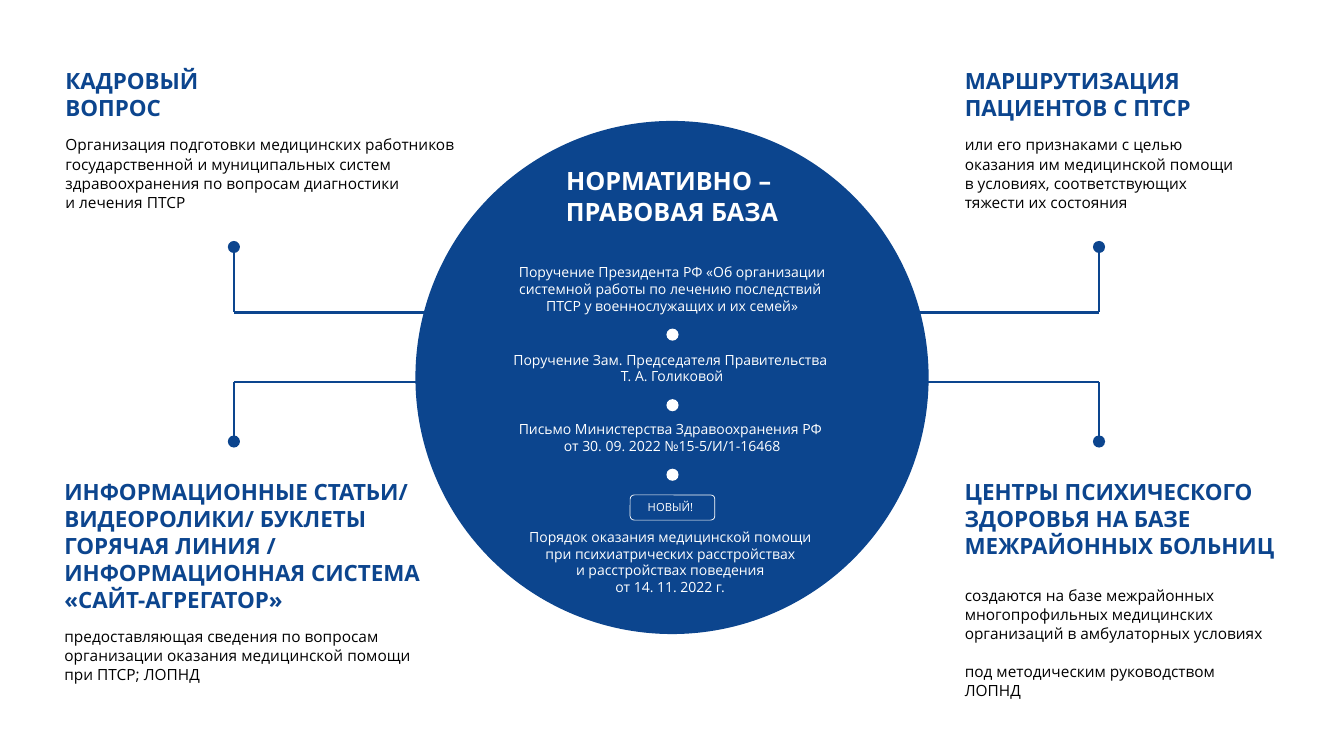
"""Builds the slide on the legal basis and the four lines of PTSD care."""
from lxml import etree
from pptx import Presentation
from pptx.dml.color import RGBColor
from pptx.enum.shapes import MSO_CONNECTOR, MSO_SHAPE
from pptx.enum.text import MSO_ANCHOR, MSO_AUTO_SIZE, PP_ALIGN
from pptx.oxml.ns import qn
from pptx.util import Emu, Pt

LEFT, CENTER = PP_ALIGN.LEFT, PP_ALIGN.CENTER
TOP, MIDDLE = MSO_ANCHOR.TOP, MSO_ANCHOR.MIDDLE
OVAL, ROUNDED = MSO_SHAPE.OVAL, MSO_SHAPE.ROUNDED_RECTANGLE
STRAIGHT = MSO_CONNECTOR.STRAIGHT

PX = 9144
FONT = "Open Sans"
COLORS = {"blue": "0C458E", "white": "FFFFFF", "black": "000000"}

TITLE = ((476, 162, 381, 68), ["НОРМАТИВНО – \nПРАВОВАЯ БАЗА"])
DOCUMENTS = [
    ((497, 261, 339, 56), ["Поручение Президента РФ «Об организации системной работы "
                           "по лечению последствий \nПТСР у военнослужащих и их семей»"]),
    ((497, 348, 339, 39), ["Поручение Зам. Председателя Правительства \nТ. А. Голиковой"]),
    ((497, 417, 339, 39), ["Письмо Министерства Здравоохранения РФ \n"
                           "от 30. 09. 2022 №15-5/И/1-16468"]),
    ((496, 524, 341, 72), ["Порядок оказания медицинской помощи \nпри психиатрических "
                           "расстройствах \nи расстройствах поведения \nот 14. 11. 2022 г. "]),
]
BADGE = ((631, 491, 71, 24), ["НОВЫЙ! "])
HEADINGS = [
    ((55, 62, 505, 64), ["КАДРОВЫЙ \nВОПРОС"]),
    ((54, 469, 484, 145), ["ИНФОРМАЦИОННЫЕ СТАТЬИ/ \nВИДЕОРОЛИКИ/ БУКЛЕТЫ",
                           "ГОРЯЧАЯ ЛИНИЯ / \nИНФОРМАЦИОННАЯ СИСТЕМА",
                           "«САЙТ-АГРЕГАТОР»"]),
    ((947, 62, 292, 64), ["МАРШРУТИЗАЦИЯ \nПАЦИЕНТОВ С ПТСР"]),
    ((947, 469, 360, 91), ["ЦЕНТРЫ ПСИХИЧЕСКОГО ЗДОРОВЬЯ НА БАЗЕ МЕЖРАЙОННЫХ БОЛЬНИЦ"]),
]
DETAILS = [
    ((55, 129, 435, 88), ["Организация подготовки медицинских работников государственной "
                          "и муниципальных систем здравоохранения по вопросам диагностики "
                          "\nи лечения ПТСР"]),
    ((54, 617, 391, 68), ["предоставляющая сведения по вопросам организации оказания "
                          "медицинской помощи \nпри ПТСР; ЛОПНД"]),
    ((947, 129, 292, 88), ["или его признаками с целью оказания им медицинской помощи "
                           "\nв условиях, соответствующих тяжести их состояния"]),
    ((947, 576, 318, 88), ["создаются на базе межрайонных многопрофильных медицинских "
                           "организаций в амбулаторных условиях",
                           "под методическим руководством ЛОПНД"]),
]
CIRCLE = (412, 120, 509, 509)
BADGE_FRAME = (625, 491, 84, 25)
DOT = 12
DOCUMENT_DOTS = [(661, 326), (661, 396), (661, 465)]
BRANCH_SIDES = [(232, 474), (1090, 834)]
BRANCH_ROWS = [(246, 310, 239), (443, 379, 432)]


def px(*values):
    return [Emu(v * PX) for v in values]


def rgb(name):
    return RGBColor.from_string(COLORS[name])


def write(sp, paragraphs, size, color, bold=False, align=LEFT, spacing=None,
          gap=0, anchor=TOP, inset=(5, 5)):
    tf = sp.text_frame
    tf.word_wrap = True
    tf.auto_size = MSO_AUTO_SIZE.NONE
    tf.vertical_anchor = anchor
    tf.margin_left, tf.margin_right = px(10, 10)
    tf.margin_top, tf.margin_bottom = px(*inset)
    for i, text in enumerate(paragraphs):
        p = tf.add_paragraph() if i else tf.paragraphs[0]
        p.text = text.replace("\n", "\v")
        p.alignment = align
        p.space_before = Pt(gap if i else 0)
        if spacing:
            p.line_spacing = Pt(spacing)
        for r in p.runs:
            r.font.name = FONT
            r.font.size = Pt(size)
            r.font.bold = bold
            r.font.color.rgb = rgb(color)


def add_text(slide, box, paragraphs, **style):
    write(slide.shapes.add_textbox(*px(*box)), paragraphs, **style)


def add_shape(slide, kind, box, fill=None, line=None):
    sp = slide.shapes.add_shape(kind, *px(*box))
    sp.shadow.inherit = False
    if fill:
        sp.fill.solid()
        sp.fill.fore_color.rgb = rgb(fill)
    else:
        sp.fill.background()
    if line:
        sp.line.color.rgb = rgb(line)
        sp.line.width = Pt(0.5)
    else:
        sp.line.fill.background()


def add_line(slide, *ends):
    line = slide.shapes.add_connector(STRAIGHT, *px(*ends))
    line.line.color.rgb = rgb("blue")
    line.line.width = Pt(1.5)
    etree.SubElement(line._element.spPr, qn("a:effectLst"))


def main():
    prs = Presentation()
    prs.slide_width, prs.slide_height = px(1333, 750)
    slide = prs.slides.add_slide(prs.slide_layouts[5])
    in_circle = dict(color="white", align=CENTER, anchor=MIDDLE, inset=(0, 5))

    add_shape(slide, OVAL, CIRCLE, fill="blue")
    box, paragraphs = TITLE
    title = slide.shapes.title
    title.left, title.top, title.width, title.height = px(*box)
    write(title, paragraphs, size=18, bold=True, spacing=22.6, **in_circle)
    slide.shapes._spTree.append(title._element)

    for box, paragraphs in DOCUMENTS:
        add_text(slide, box, paragraphs, size=10, spacing=12, **in_circle)
    for x, y in DOCUMENT_DOTS:
        add_shape(slide, OVAL, (x, y, DOT, DOT), fill="white")
    add_shape(slide, ROUNDED, BADGE_FRAME, line="white")
    add_text(slide, *BADGE, size=8, color="white", align=CENTER)

    for box, paragraphs in HEADINGS:
        add_text(slide, box, paragraphs, size=16, color="blue", bold=True, spacing=19.3)
    for box, paragraphs in DETAILS:
        add_text(slide, box, paragraphs, size=11, color="black", spacing=13.6, gap=13.6)

    for outer, inner in BRANCH_SIDES:
        for end, bend, dot_top in BRANCH_ROWS:
            add_line(slide, outer, bend, inner, bend)
            add_line(slide, outer, end, outer, bend)
            add_shape(slide, OVAL, (outer - DOT // 2, dot_top, DOT, DOT), fill="blue")

    prs.save("out.pptx")


if __name__ == "__main__":
    main()
